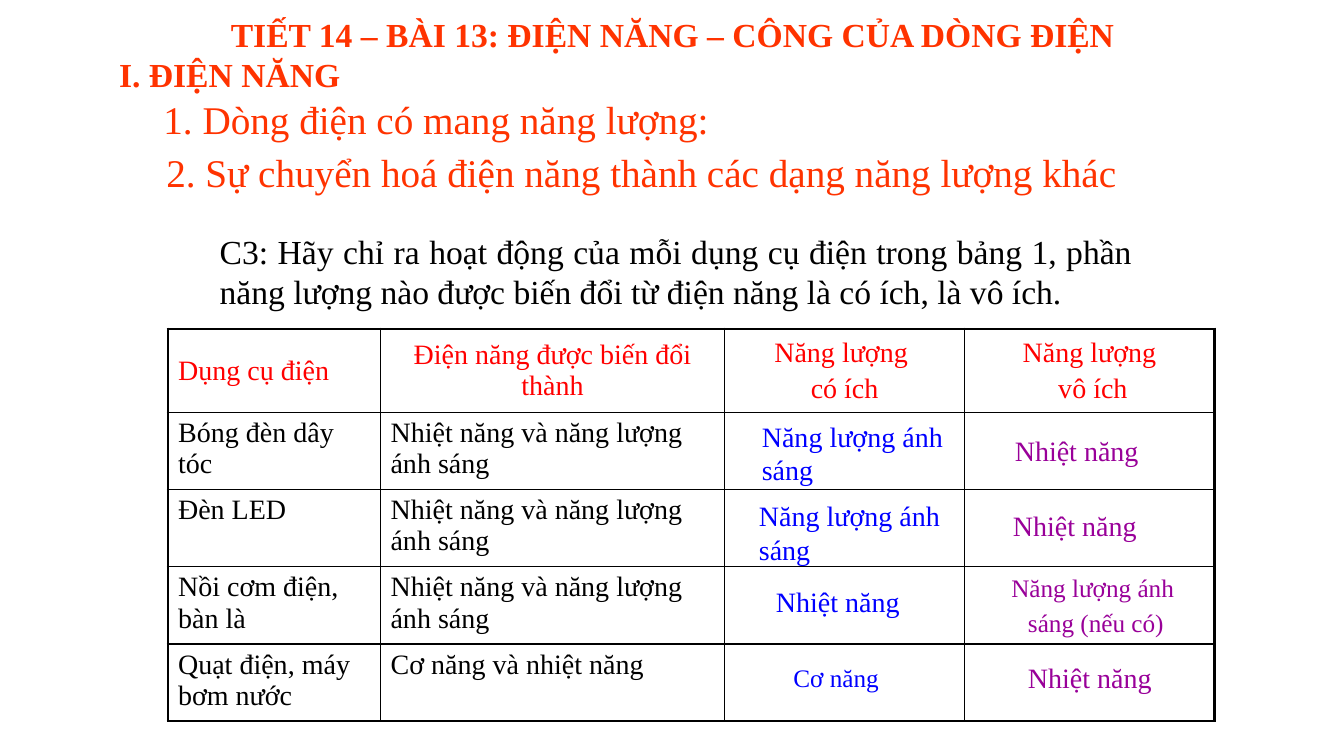
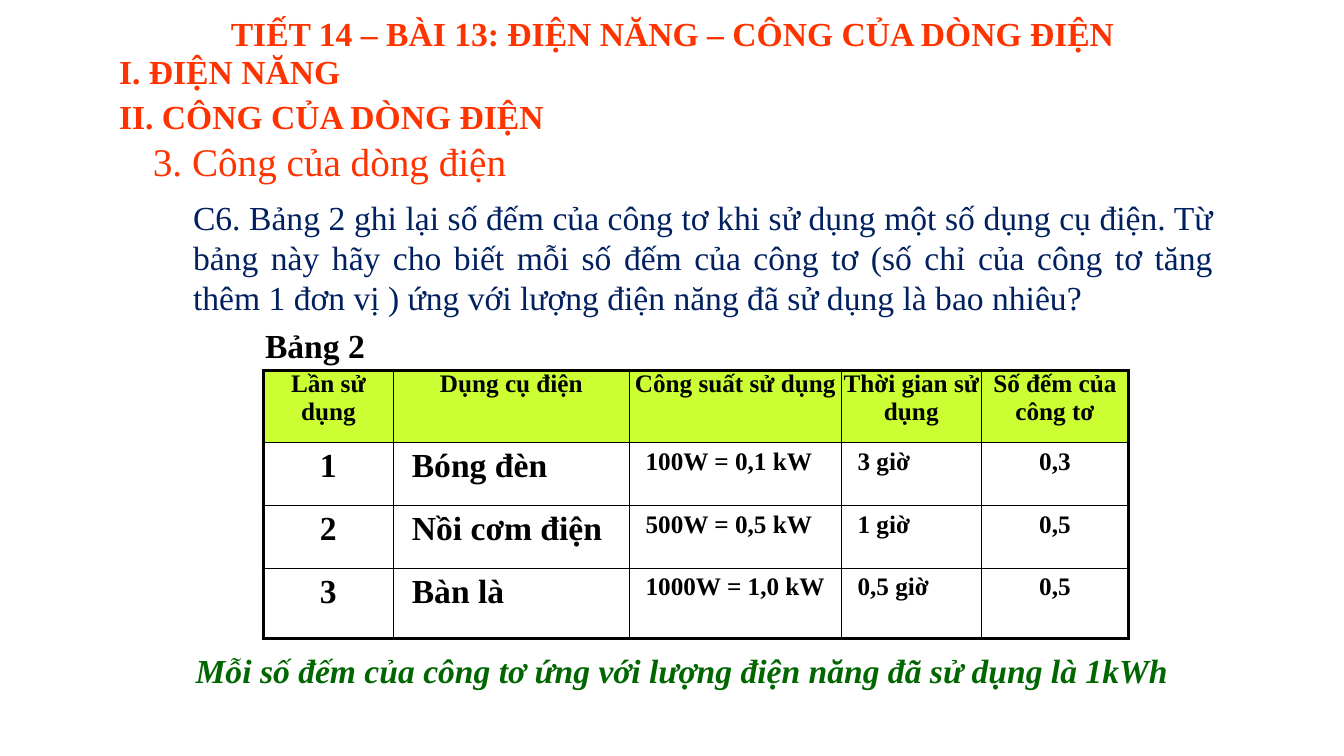
"""Build two physics lesson slides on electrical energy and the work of a current."""
from lxml import etree
from pptx import Presentation
from pptx import util as u
from pptx.dml import color
from pptx.enum import text as t
from pptx.oxml import ns

Pt = u.Pt
FONT = "Times New Roman"
RED, ORANGE, BLUE, PURPLE = "FF0000", "FF3300", "0000FF", "990099"
BLACK, NAVY, GREEN, LIME = "000000", "002060", "006600", "CCFF33"
LEFT, CENTER, JUSTIFY = t.PP_ALIGN.LEFT, t.PP_ALIGN.CENTER, t.PP_ALIGN.JUSTIFY
TOP, MIDDLE = t.MSO_ANCHOR.TOP, t.MSO_ANCHOR.MIDDLE
INSETS = (7.2, 3.6, 7.2, 3.6)
LESSON = "TIẾT 14 – BÀI 13: ĐIỆN NĂNG – CÔNG CỦA DÒNG ĐIỆN"
SECTION = dict(size=24, bold=True)
TOPIC = dict(size=28)
USEFUL = dict(size=20, color=BLUE)
WASTED = dict(size=20, color=PURPLE)

ENERGY_SLIDE = dict(
    title_top=6.5,
    outline_top=34.8,
    outline=[
        ("I. ĐIỆN NĂNG", dict(SECTION)),
        ("1. Dòng điện có mang năng lượng:", dict(TOPIC, indent=31.7, before=1)),
        ("2. Sự chuyển hoá điện năng thành các dạng năng lượng khác", dict(TOPIC, indent=33.8, before=4)),
    ],
    notes=[
        ("C3: Hãy chỉ ra hoạt động của mỗi dụng cụ điện trong bảng 1, phần năng lượng nào được "
         "biến đổi từ điện năng là có ích, là vô ích.",
         (149.8, 161.3, 666, 65.5), dict(size=24, align=JUSTIFY)),
        ("Năng lượng ánh sáng", (537.1, 295.9, 144, 55.4), USEFUL),
        ("Năng lượng ánh sáng", (535, 352.8, 144, 55.4), USEFUL),
        ("Nhiệt năng", (547.2, 414, 144, 31), USEFUL),
        ("Cơ năng", (559.4, 469.4, 75.6, 28.8), dict(USEFUL, size=18, align=CENTER)),
        ("Nhiệt năng", (717.8, 306, 144, 31), WASTED),
        ("Nhiệt năng", (716.4, 360, 144, 31), WASTED),
        ("Năng lượng ánh\n sáng (nếu có)", (705.6, 405, 149.8, 54), dict(WASTED, size=18, align=CENTER, before=3.6)),
        ("Nhiệt năng", (727.2, 468, 144, 31), WASTED),
    ],
)
APPLIANCE_HEADERS = ["Dụng cụ điện", "Điện năng được biến đổi thành", "Năng lượng \ncó ích", "Năng lượng\n vô ích"]
APPLIANCES = [
    ("Bóng đèn dây tóc", "Nhiệt năng và năng lượng ánh sáng"),
    ("Đèn LED", "Nhiệt năng và năng lượng ánh sáng"),
    ("Nồi cơm điện, bàn là", "Nhiệt năng và năng lượng ánh sáng"),
    ("Quạt điện, máy bơm nước", "Cơ năng và nhiệt năng"),
]

WORK_SLIDE = dict(
    title_top=5.4,
    outline_top=32.4,
    outline=[
        ("I. ĐIỆN NĂNG", dict(SECTION)),
        ("II. CÔNG CỦA DÒNG ĐIỆN", dict(SECTION, before=4)),
        ("3. Công của dòng điện", dict(TOPIC, indent=24.2, before=0.5)),
    ],
    notes=[
        ("C6. Bảng 2 ghi lại số đếm của công tơ khi sử dụng một số dụng cụ điện. Từ bảng này hãy cho "
         "biết mỗi số đếm của công tơ (số chỉ của công tơ tăng thêm 1 đơn vị ) ứng với lượng điện năng "
         "đã sử dụng là bao nhiêu?",
         (130.8, 136.8, 743, 94.3), dict(size=24, color=NAVY, align=JUSTIFY)),
        ("Mỗi số đếm của công tơ ứng với lượng điện năng đã sử dụng là 1kWh",
         (132.7, 460.8, 782.6, 36), dict(size=24, color=GREEN, bold=True, italic=True, align=JUSTIFY)),
        ("Bảng 2", (182.2, 228.6, 102.2, 36), dict(size=24, bold=True)),
    ],
)
METER_HEADERS = ["Lần sử dụng", "Dụng cụ điện", "Công suất sử dụng", "Thời gian sử dụng", "Số đếm của công tơ"]
METER_READINGS = [
    ("1", " Bóng đèn", " 100W = 0,1 kW", " 3 giờ", "0,3"),
    ("2", " Nồi cơm điện", " 500W = 0,5 kW", " 1 giờ", "0,5"),
    ("3", " Bàn là", " 1000W = 1,0 kW", " 0,5 giờ", "0,5"),
]
METER_FORMATS = [
    dict(size=24, bold=True, align=CENTER),
    dict(size=24, bold=True),
    dict(size=18, bold=True),
    dict(size=18, bold=True),
    dict(size=18, bold=True, align=CENTER),
]


def rgb(value):
    return color.RGBColor.from_string(value)


def write(paragraph, content, size=20, color=BLACK, bold=False, italic=False, align=LEFT,
          before=0, indent=0):
    properties = paragraph._p.get_or_add_pPr()
    properties.set("marL", str(Pt(indent)))
    properties.set("indent", "0")
    etree.SubElement(properties, ns.qn("a:buNone"))
    paragraph.alignment = align
    paragraph.space_before = Pt(before)
    run = paragraph.add_run()
    run.text = content
    font = run.font
    font.name, font.size, font.bold, font.italic = FONT, Pt(size), bold, italic
    font.color.rgb = rgb(color)


def fill_frame(frame, lines):
    for number, (content, style) in enumerate(lines):
        write(frame.add_paragraph() if number else frame.paragraphs[0], content, **style)


def split_lines(content, before=0, **style):
    return [(line, dict(style, before=before if number else 0))
            for number, line in enumerate(content.split("\n"))]


def place(shape, box, lines):
    shape.left, shape.top, shape.width, shape.height = map(Pt, box)
    frame = shape.text_frame
    frame.word_wrap = True
    frame.auto_size = t.MSO_AUTO_SIZE.NONE
    frame.vertical_anchor = TOP
    fill_frame(frame, lines)


def add_lesson_slide(deck, content):
    slide = deck.slides.add_slide(deck.slide_layouts[1])
    title, outline = slide.placeholders
    place(title, (157.7, content["title_top"], 729.4, 36), [(LESSON, dict(SECTION, color=ORANGE))])
    headings = [(line, dict(style, color=ORANGE)) for line, style in content["outline"]]
    place(outline, (77.8, content["outline_top"], 729.4, 108), headings)
    return slide


def add_notes(slide, notes):
    for note, box, style in notes:
        place(slide.shapes.add_textbox(0, 0, 0, 0), box, split_lines(note, **style))


def set_borders(cell, widths):
    properties = cell._tc.get_or_add_tcPr()
    for position, (side, width) in enumerate(zip("LRTB", widths)):
        line = etree.Element(ns.qn(f"a:ln{side}"), w=str(Pt(width)))
        fill = etree.SubElement(line, ns.qn("a:solidFill"))
        etree.SubElement(fill, ns.qn("a:srgbClr"), val=BLACK)
        properties.insert(position, line)


def fill_cell(cell, content, insets=INSETS, anchor=TOP, fill=None, **style):
    cell.margin_left, cell.margin_top, cell.margin_right, cell.margin_bottom = map(Pt, insets)
    cell.vertical_anchor = anchor
    if fill:
        cell.fill.solid()
        cell.fill.fore_color.rgb = rgb(fill)
    else:
        cell.fill.background()
    if content:
        fill_frame(cell.text_frame, split_lines(content, **style))


def add_grid(slide, left, top, widths, heights, rows):
    table = slide.shapes.add_table(len(heights), len(widths), Pt(left), Pt(top),
                                   Pt(sum(widths)), Pt(sum(heights))).table
    table.first_row = table.horz_banding = False
    for column, width in zip(table.columns, widths):
        column.width = Pt(width)
    for row, height in zip(table.rows, heights):
        row.height = Pt(height)
    for r, row in enumerate(rows):
        for c, (content, style) in enumerate(row):
            cell = table.cell(r, c)
            fill_cell(cell, content, **style)
            edges = (c == 0, c == len(widths) - 1, r == 0, r == len(heights) - 1)
            set_borders(cell, [2.25 if outer else 1 for outer in edges])


def main():
    deck = Presentation()
    deck.slide_width, deck.slide_height = Pt(960), Pt(540)

    energy = add_lesson_slide(deck, ENERGY_SLIDE)
    header = dict(size=20, color=RED, anchor=MIDDLE, before=4)
    rows = [[(name, dict(header, align=CENTER if c else LEFT)) for c, name in enumerate(APPLIANCE_HEADERS)]]
    rows += [[(fact, dict(size=20)) for fact in (*facts, "", "")] for facts in APPLIANCES]
    add_grid(energy, 120, 235, [151.8, 245.9, 171.3, 178.4], [59.8] + [55.1] * 4, rows)
    add_notes(energy, ENERGY_SLIDE["notes"])

    work = add_lesson_slide(deck, WORK_SLIDE)
    header = dict(size=18, bold=True, align=CENTER, insets=(0, 0, 0, 0), fill=LIME)
    rows = [[(name, header) for name in METER_HEADERS]]
    rows += [list(zip(reading, METER_FORMATS)) for reading in METER_READINGS]
    add_grid(work, 188.1, 264.5, [92.9, 168.5, 151.4, 100.1, 105.1], [51.8, 44.8, 44.8, 50.2], rows)
    add_notes(work, WORK_SLIDE["notes"])

    deck.save("out.pptx")


if __name__ == "__main__":
    main()
